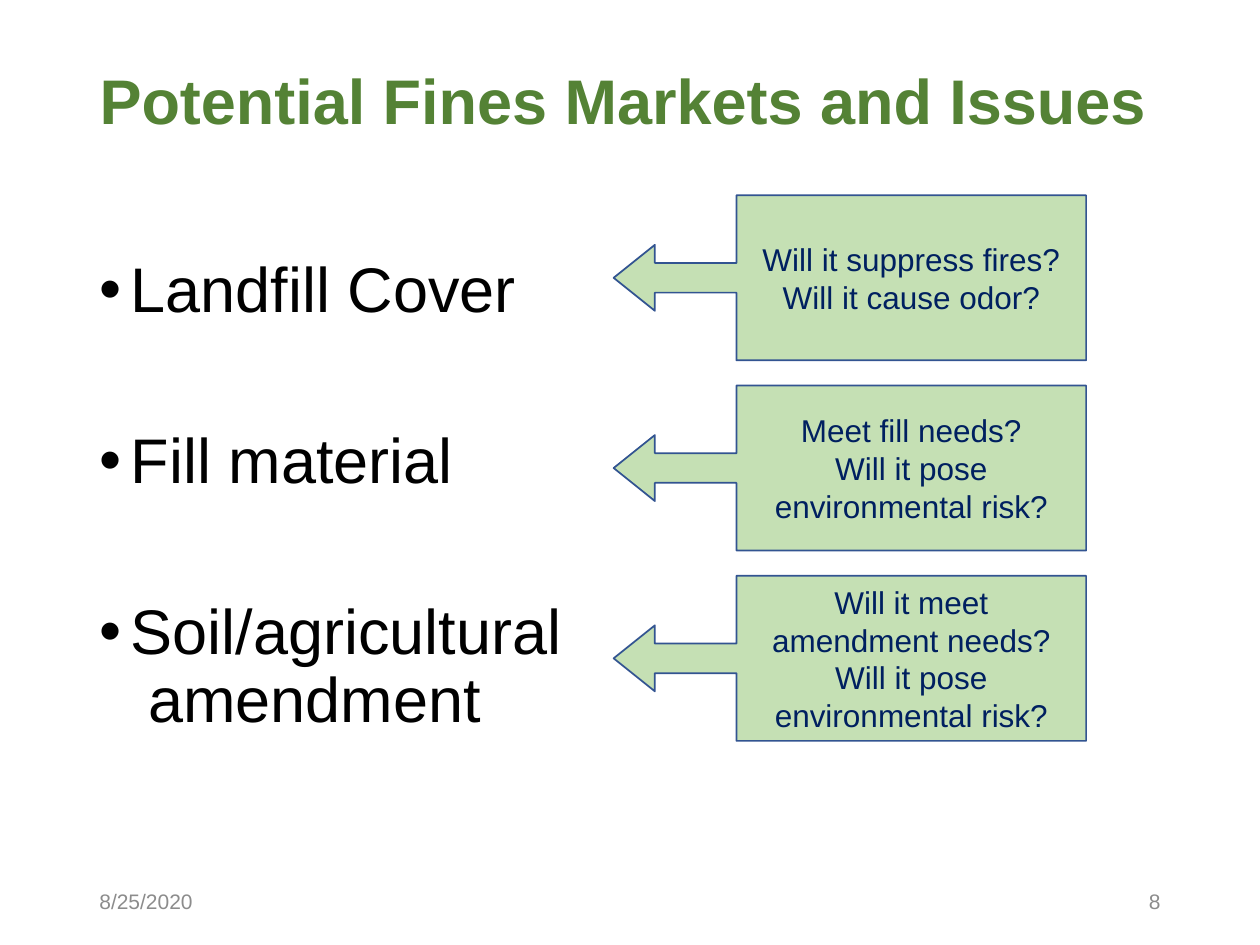
from lxml import etree
from pptx import Presentation
from pptx.dml.color import RGBColor
from pptx.enum.shapes import MSO_SHAPE
from pptx.enum.text import MSO_ANCHOR, MSO_AUTO_SIZE, PP_ALIGN
from pptx.oxml.ns import qn
from pptx.util import Inches, Pt

TITLE = "Potential Fines Markets and Issues"
MARKETS = [
    ("Landfill Cover", ["Will it suppress fires?", "Will it cause odor?"]),
    ("Fill material", ["Meet fill needs?", "Will it pose environmental risk?"]),
    ("Soil/agricultural\v amendment",
     ["Will it meet amendment needs?", "Will it pose environmental risk?"]),
]
DATE, PAGE_NUMBER = "8/25/2020", "8"

GREEN = RGBColor(0x54, 0x82, 0x35)
PALE_GREEN = RGBColor(0xC5, 0xE0, 0xB4)
BLUE = RGBColor(0x32, 0x54, 0x91)
NAVY = RGBColor(0x00, 0x20, 0x60)
BLACK = RGBColor(0x00, 0x00, 0x00)
GREY = RGBColor(0x8C, 0x8C, 0x8C)

CALLOUT = MSO_SHAPE.LEFT_ARROW_CALLOUT
MIDDLE, TOP = MSO_ANCHOR.MIDDLE, MSO_ANCHOR.TOP
LEFT, CENTER, RIGHT = PP_ALIGN.LEFT, PP_ALIGN.CENTER, PP_ALIGN.RIGHT
NO_FIT = MSO_AUTO_SIZE.NONE

WIDTH, HEIGHT = 10, 7.5
MARGIN = 0.69
CONTENT_WIDTH = WIDTH - 2 * MARGIN
FOOTER_TOP, FOOTER_WIDTH, FOOTER_HEIGHT = 6.95, 2.25, 0.4
CALLOUT_LEFT, CALLOUT_TOP, CALLOUT_WIDTH, CALLOUT_HEIGHT = 4.87, 1.55, 3.75, 1.31
CALLOUT_PITCH = 1.51
CALLOUT_ADJUSTMENTS = (0.18, 0.2, 0.25, 0.74)
MARKET_GAP = Pt(58.9)


def write(shape, lines, size, color, align=LEFT, anchor=MIDDLE, bold=False,
          spacing=1.0, gap=0, bullet=False):
    frame = shape.text_frame
    frame.word_wrap = True
    frame.auto_size = NO_FIT
    frame.vertical_anchor = anchor
    for index, line in enumerate(lines):
        para = frame.paragraphs[0] if index == 0 else frame.add_paragraph()
        para.alignment = align
        para.line_spacing = spacing
        para.space_before = gap if index else 0
        if bullet:
            add_bullet(para)
        for part_index, part in enumerate(line.split("\v")):
            if part_index:
                para.add_line_break()
            span = para.add_run()
            span.text = part
            span.font.name = "Arial"
            span.font.size = Pt(size)
            span.font.bold = bold
            span.font.color.rgb = color


def add_bullet(para):
    properties = para._p.get_or_add_pPr()
    properties.set("marL", str(Inches(0.25)))
    properties.set("indent", str(-Inches(0.25)))
    etree.SubElement(properties, qn("a:buFont"), typeface="Arial")
    etree.SubElement(properties, qn("a:buChar"), char="•")


def add_box(page, *place):
    return page.shapes.add_textbox(*map(Inches, place))


def add_callout(page, row, questions):
    shape = page.shapes.add_shape(
        CALLOUT, Inches(CALLOUT_LEFT), Inches(CALLOUT_TOP + row * CALLOUT_PITCH),
        Inches(CALLOUT_WIDTH), Inches(CALLOUT_HEIGHT))
    for index, value in enumerate(CALLOUT_ADJUSTMENTS):
        shape.adjustments[index] = value
    shape.shadow.inherit = False
    shape.fill.solid()
    shape.fill.fore_color.rgb = PALE_GREEN
    shape.line.color.rgb = BLUE
    shape.line.width = Pt(1)
    write(shape, questions, 18, NAVY, align=CENTER)


def main():
    deck = Presentation()
    deck.slide_width, deck.slide_height = Inches(WIDTH), Inches(HEIGHT)
    page = deck.slides.add_slide(deck.slide_layouts.get_by_name("Title Only"))

    title = page.shapes.title
    title.left, title.top = Inches(MARGIN), Inches(0.1)
    title.width, title.height = Inches(CONTENT_WIDTH), Inches(1.45)
    write(title, [TITLE], 36, GREEN, bold=True, spacing=0.9)

    markets = add_box(page, MARGIN, 2, CONTENT_WIDTH, 4.76)
    write(markets, [market for market, _ in MARKETS], 36, BLACK, anchor=TOP,
          spacing=0.9, gap=MARKET_GAP, bullet=True)

    footers = [(DATE, MARGIN, LEFT),
               (PAGE_NUMBER, WIDTH - MARGIN - FOOTER_WIDTH, RIGHT)]
    for text, left, align in footers:
        box = add_box(page, left, FOOTER_TOP, FOOTER_WIDTH, FOOTER_HEIGHT)
        write(box, [text], 12, GREY, align=align)

    for row, (_, questions) in enumerate(MARKETS):
        add_callout(page, row, questions)

    deck.save("out.pptx")


if __name__ == "__main__":
    main()
